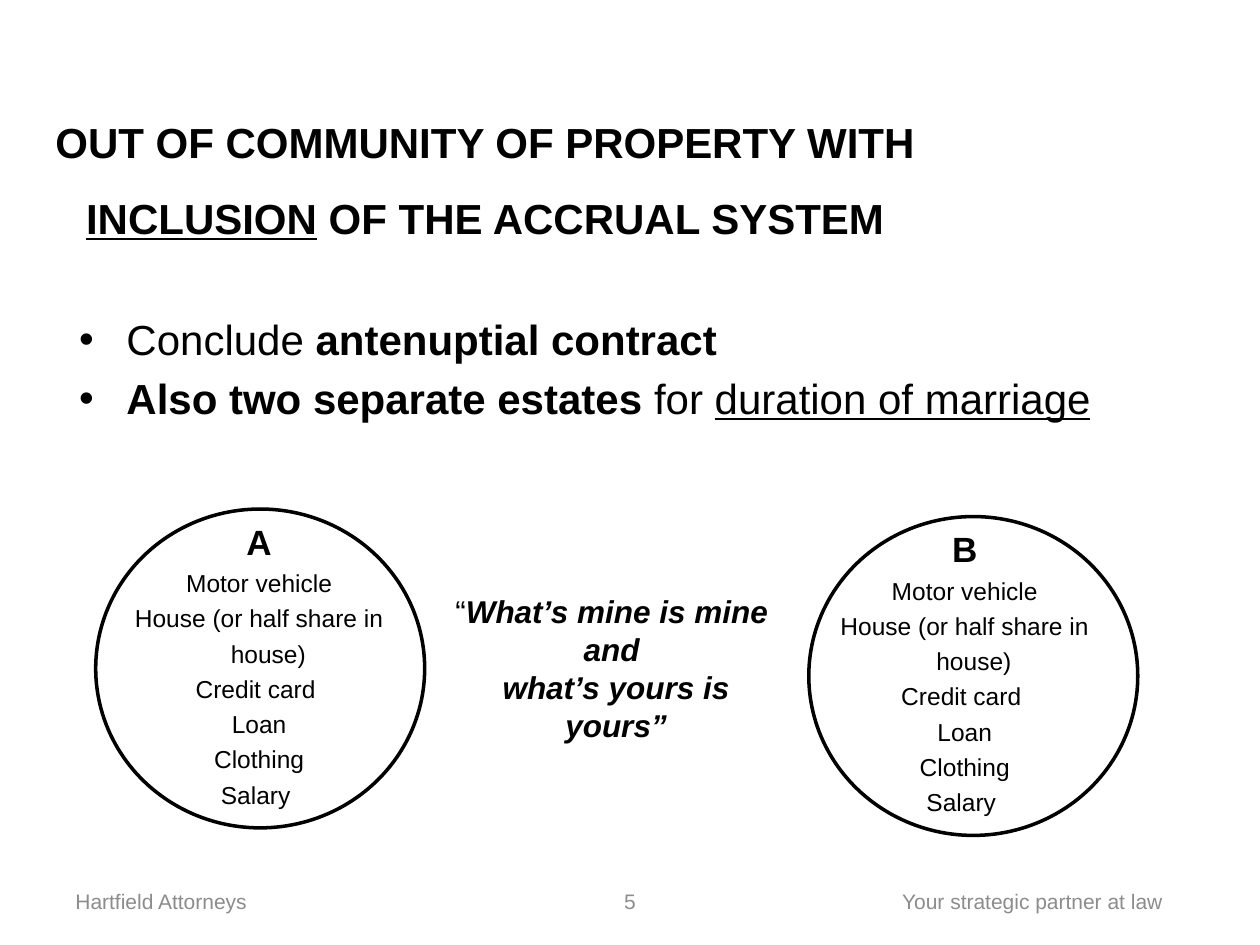
from pptx import Presentation
from pptx.dml.color import RGBColor
from pptx.enum.shapes import MSO_SHAPE
from pptx.enum.text import MSO_ANCHOR as ANCHOR, PP_ALIGN as ALIGN
from pptx.oxml.ns import qn
from pptx.util import Pt
from lxml import etree

BLACK = RGBColor(0, 0, 0)
WHITE = RGBColor(255, 255, 255)
GRAY = RGBColor(0x8C, 0x8C, 0x8C)

BOLD = {"bold": True}
UNDERLINED = {"underline": True}
BOLD_ITALIC = {"bold": True, "italic": True}
ESTATE = ["Motor vehicle", "House (or half share in house) ", "Credit card ",
          "Loan", "Clothing", "Salary "]


def set_indent(p, left, hanging, bullet=None):
    """Give a paragraph a hanging indent and an optional bullet."""
    pPr = p._p.get_or_add_pPr()
    pPr.set("marL", str(Pt(left)))
    pPr.set("indent", str(-Pt(hanging)))
    if bullet:
        etree.SubElement(pPr, qn("a:buFont")).set("typeface", "Arial")
        etree.SubElement(pPr, qn("a:buChar")).set("char", bullet)


def add_text(s, box, paragraphs, size, color=BLACK, anchor=ANCHOR.TOP,
             indent=None, **formats):
    """Add a text box whose paragraphs are lists of (text, font format) runs."""
    tf = s.shapes.add_textbox(*map(Pt, box)).text_frame
    tf.word_wrap = True
    tf.vertical_anchor = anchor
    for i, runs in enumerate(paragraphs):
        p = tf.add_paragraph() if i else tf.paragraphs[0]
        if indent:
            set_indent(p, *indent)
        for name, value in formats.items():
            if i or name != "space_before":
                setattr(p, name, value)
        for text, fmt in runs:
            r = p.add_run()
            r.text = text
            r.font.color.rgb = color
            for name, value in {"name": "Arial", "size": Pt(size), **fmt}.items():
                setattr(r.font, name, value)


def add_title(s, box):
    """Add the two-line heading."""
    runs = [("OUT OF COMMUNITY OF PROPERTY WITH ", BOLD),
            ("INCLUSION", {**BOLD, **UNDERLINED}),
            (" OF THE ACCRUAL SYSTEM", BOLD)]
    add_text(s, box, [runs], 24, anchor=ANCHOR.MIDDLE,
             alignment=ALIGN.CENTER, line_spacing=1.5)


def add_bullets(s, box):
    """Add the bulleted points."""
    points = [[("Conclude ", {}), ("antenuptial contract", BOLD)],
              [("Also two separate estates ", BOLD), ("for ", {}),
               ("duration of marriage", UNDERLINED)]]
    add_text(s, box, points, 24, indent=(27, 27, "•"), space_before=Pt(4.8))


def add_estate(s, box, name, text_left):
    """Add one spouse's circle with the list of assets over it."""
    left, top, width, height = box
    sp = s.shapes.add_shape(MSO_SHAPE.OVAL, *map(Pt, box))
    sp.shadow.inherit = False
    sp.fill.solid()
    sp.fill.fore_color.rgb = WHITE
    sp.line.color.rgb = BLACK
    sp.line.width = Pt(2)
    heading = [(name, {**BOLD, "size": Pt(20)})]
    add_text(s, (text_left, top - 2, width, 214.5),
             [heading] + [[(item, {})] for item in ESTATE], 14,
             indent=(42, 14.4), alignment=ALIGN.CENTER, line_spacing=1.2)


def add_quote(s, box):
    """Add the saying between the circles."""
    lines = [[("“", {}), ("What’s mine is mine ", BOLD_ITALIC)],
             [("and ", BOLD_ITALIC)],
             [("what’s yours is yours”", BOLD_ITALIC)]]
    add_text(s, box, lines, 18, alignment=ALIGN.CENTER)


def add_footer(s, box):
    """Add the firm, page number and motto along the bottom."""
    left, top, width, height = box
    parts = [("Hartfield Attorneys", 0, 168, ALIGN.LEFT),
             ("5", (width - 168) / 2, 168, ALIGN.CENTER),
             ("Your strategic partner at law", width - 188, 188, ALIGN.CENTER)]
    for text, offset, part_width, align in parts:
        add_text(s, (left + offset, top, part_width, height), [[(text, {})]],
                 12, GRAY, ANCHOR.MIDDLE, alignment=align)


def main():
    """Build and save the slide."""
    prs = Presentation()
    prs.slide_width, prs.slide_height = Pt(720), Pt(540)
    s = prs.slides.add_slide(prs.slide_layouts[6])
    add_footer(s, (36, 500.5, 648, 28.75))
    add_title(s, (0, 62.6, 554.4, 65.5))
    add_bullets(s, (38.2, 175.7, 607, 146.9))
    add_estate(s, (462.2, 295.2, 188, 182.2), "B", 443.5)
    add_estate(s, (54.7, 290.9, 188, 182.2), "A", 40.3)
    add_quote(s, (252.7, 334.8, 198.7, 94.3))
    prs.save("out.pptx")


if __name__ == "__main__":
    main()
